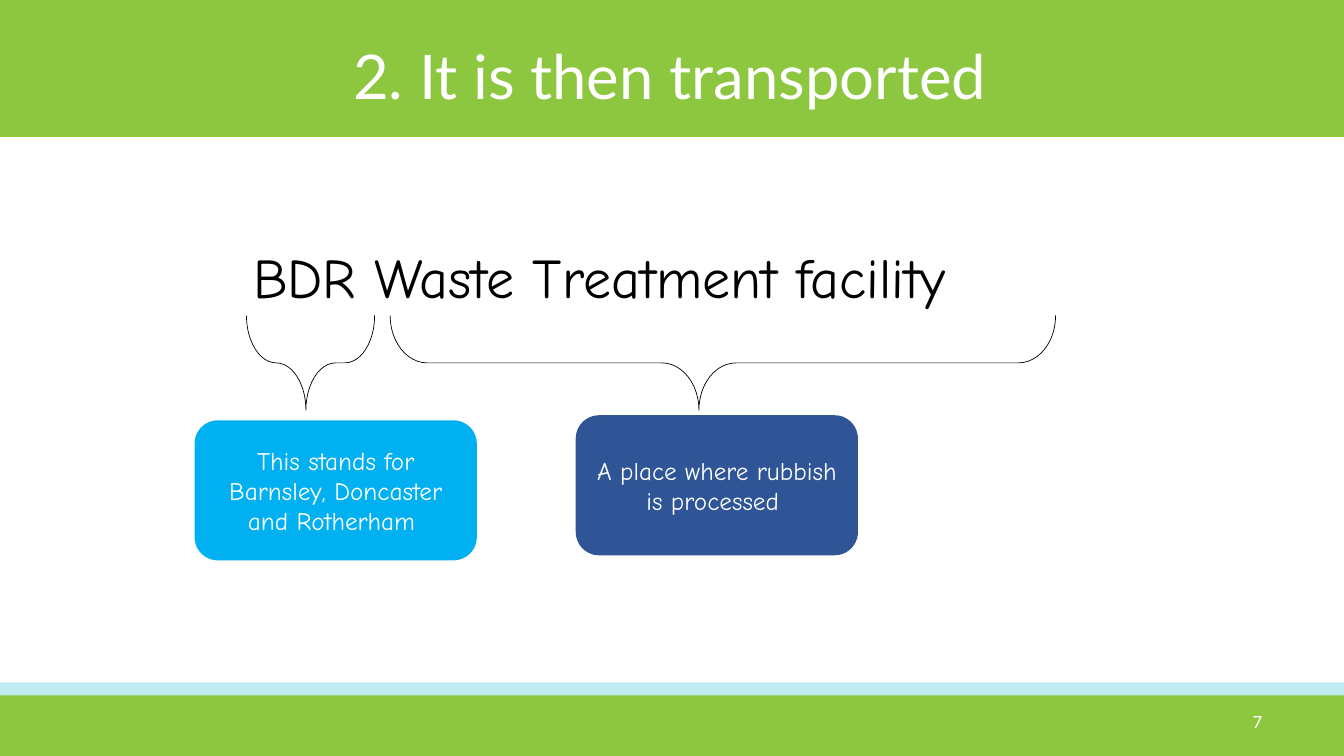
from dataclasses import dataclass

from lxml import etree
from pptx import Presentation
from pptx.dml.color import RGBColor
from pptx.enum.shapes import MSO_SHAPE
from pptx.enum.text import MSO_ANCHOR, MSO_AUTO_SIZE, PP_ALIGN
from pptx.oxml.ns import qn
from pptx.util import Inches, Pt

RECT = MSO_SHAPE.RECTANGLE
ROUND = MSO_SHAPE.ROUNDED_RECTANGLE
BRACE = MSO_SHAPE.LEFT_BRACE
TOP, MIDDLE = MSO_ANCHOR.TOP, MSO_ANCHOR.MIDDLE
LEFT, CENTER, RIGHT = PP_ALIGN.LEFT, PP_ALIGN.CENTER, PP_ALIGN.RIGHT
FIXED = MSO_AUTO_SIZE.NONE
WIDE, HIGH = Inches(13.33), Inches(7.5)


@dataclass(frozen=True)
class Theme:
    green: str = "8DC63F"
    aqua: str = "20BFD0"
    sky: str = "00B0F0"
    navy: str = "2F5597"
    black: str = "000000"
    white: str = "FFFFFF"
    head: str = "Lato"
    hand: str = "Comic Neue"
    title: int = 44
    term: int = 40
    note: int = 18
    page: int = 12
    hair: float = 0.5


THEME = Theme()


def share(x, y, w, h):
    return (round(WIDE * x / 100), round(HIGH * y / 100),
            round(WIDE * w / 100), round(HIGH * h / 100))


def move(shape, area):
    shape.left, shape.top, shape.width, shape.height = share(*area)


def write(shape, text, face, size, color, align=CENTER, anchor=MIDDLE):
    frame = shape.text_frame
    frame.text = text
    frame.word_wrap = True
    frame.auto_size = FIXED
    frame.vertical_anchor = anchor
    para = frame.paragraphs[0]
    para.alignment = align
    para.space_before = Pt(0)
    for run in para.runs:
        run.font.name = face
        run.font.size = Pt(size)
        run.font.color.rgb = RGBColor.from_string(color)
    return para


def block(slide, kind, area, color):
    shape = slide.shapes.add_shape(kind, *share(*area))
    shape.shadow.inherit = False
    shape.fill.solid()
    shape.fill.fore_color.rgb = RGBColor.from_string(color)
    shape.line.fill.background()
    return shape


def band(slide, order, top, height, color, alpha=100):
    shape = block(slide, RECT, (0, top, 100, height), color)
    if alpha < 100:
        tint = shape.fill._xPr.find(qn("a:solidFill"))[0]
        etree.SubElement(tint, qn("a:alpha"), val=str(alpha * 1000))
    slide.shapes._spTree.insert(2 + order, shape._element)


def brace(slide, area):
    x, y, w, h = share(*area)
    shape = slide.shapes.add_shape(
        BRACE, x + (w - h) // 2, y + (h - w) // 2, h, w)
    shape.rotation = 270
    shape.adjustments[0] = 0.391
    shape.adjustments[1] = 0.464
    shape.shadow.inherit = False
    shape.fill.background()
    shape.line.color.rgb = RGBColor.from_string(THEME.black)
    shape.line.width = Pt(THEME.hair)


def card(slide, x, y, text, color):
    shape = block(slide, ROUND, (x, y, 21, 18.53), color)
    write(shape, text, THEME.hand, THEME.note, THEME.white)


def title(slide, text):
    shape = slide.shapes.title
    move(shape, (2.18, 2.8, 95.35, 15.47))
    para = write(shape, text, THEME.head, THEME.title, THEME.white)
    para.line_spacing = 0.9


def term(slide, text):
    shape = slide.placeholders[1]
    move(shape, (18.08, 32.4, 68.04, 9.87))
    para = write(shape, text, THEME.hand, THEME.term, THEME.black, LEFT, TOP)
    para.line_spacing = 0.9
    props = para._p.get_or_add_pPr()
    props.set("marL", "0")
    props.set("indent", "0")
    etree.SubElement(props, qn("a:buNone"))


def page(slide, text):
    shape = slide.shapes.add_textbox(*share(72.17, 92.8, 22.5, 5.33))
    write(shape, text, THEME.head, THEME.page, THEME.white, RIGHT)


def main():
    deck = Presentation()
    deck.slide_width, deck.slide_height = WIDE, HIGH
    slide = deck.slides.add_slide(deck.slide_layouts[1])
    band(slide, 0, 90.27, 3.2, THEME.aqua, 29)
    band(slide, 1, 0, 18.13, THEME.green)
    band(slide, 2, 92, 8, THEME.green)
    title(slide, "2. It is then transported")
    term(slide, "BDR Waste Treatment facility")
    page(slide, "7")
    for x, w in ((18.34, 9.53), (29.03, 49.51)):
        brace(slide, (x, 41.73, w, 12.53))
    card(slide, 14.48, 55.6,
         "This stands for Barnsley, Doncaster and Rotherham ", THEME.sky)
    card(slide, 42.84, 54.93,
         "A place where rubbish is processed ", THEME.navy)
    deck.save("out.pptx")


if __name__ == "__main__":
    main()
